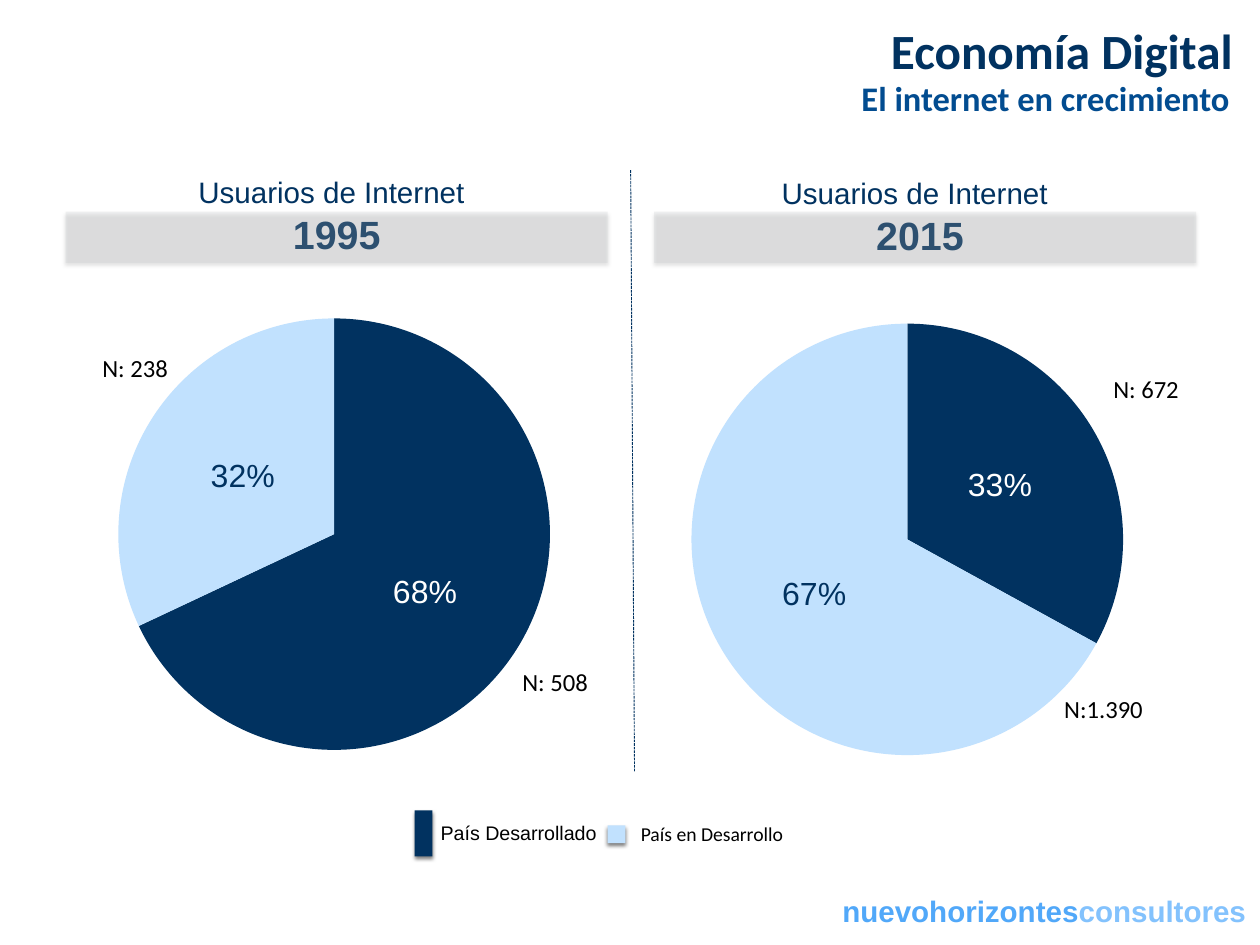
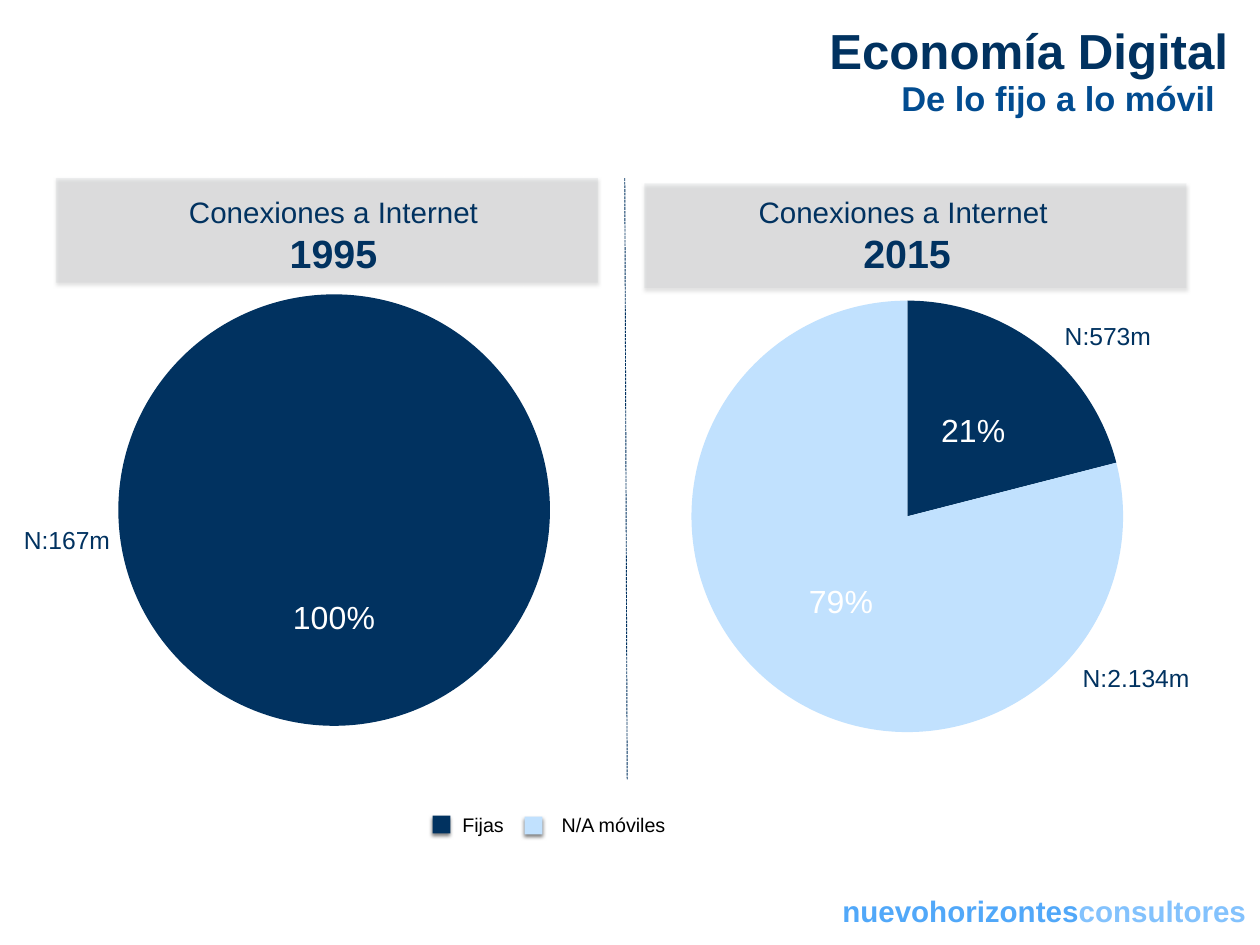
from lxml import etree
from pptx import Presentation
from pptx.chart.data import CategoryChartData
from pptx.dml.color import RGBColor
from pptx.enum.chart import XL_CHART_TYPE, XL_LABEL_POSITION
from pptx.enum.dml import MSO_LINE
from pptx.enum.shapes import MSO_CONNECTOR, MSO_SHAPE
from pptx.enum.text import MSO_ANCHOR, MSO_AUTO_SIZE, PP_ALIGN
from pptx.oxml.ns import qn
from pptx.util import Cm, Pt

PIE = XL_CHART_TYPE.PIE
LABEL_CENTER = XL_LABEL_POSITION.CENTER
DASH = MSO_LINE.SQUARE_DOT
STRAIGHT = MSO_CONNECTOR.STRAIGHT
RECTANGLE = MSO_SHAPE.RECTANGLE
MIDDLE = MSO_ANCHOR.MIDDLE
NO_AUTOSIZE = MSO_AUTO_SIZE.NONE
CENTER, RIGHT = PP_ALIGN.CENTER, PP_ALIGN.RIGHT

NAVY, BLUE, PALE = "013260", "024C90", "C1E1FE"
GRAY, BLACK, WHITE = "C4C8CB", "000000", "FFFFFF"
SLICE_COLORS = (NAVY, PALE)

PAGE_SIZE = (36.12, 27.1)
PIE_SIZE = 12.5
BAND_WIDTH = 15.54
HEADING_HEIGHT = 2.67
COUNT_HEIGHT = 1.14
LEGEND_SIZE = (14.4, 0.97)
SWATCH_WIDTH = 0.51
INSET = 0.15

WORDMARK = [("nuevohorizontes", "51A8F9"), ("consultores", "83C2FD")]
WORDMARK_PLACE = (6, 25.35, 29.87, 1.52)

SLIDES = [
    {
        "title": "Economía Digital",
        "title_place": (1.83, 0.43, 33.66, 2.01),
        "subtitle": "El internet en crecimiento",
        "subtitle_place": (24.46, 2.06, 11.02, 1.47),
        "title_font": "Calibri",
        "bands_on_top": True,
        "band_height": 1.47,
        "bands": [(1.88, 6.07), (18.75, 6.07)],
        "headings": [
            (("Usuarios de Internet", " 1995"), (5.51, 4.85, 7.98)),
            (("Usuarios de Internet", " 2015"), (22.23, 4.88, 7.98)),
        ],
        "pies": [((68, 32), (3.33, 9.07)), ((33, 67), (19.76, 9.22))],
        "label_colors": (WHITE, NAVY),
        "count_format": {"name": "Calibri", "color": BLACK},
        "counts": [
            ("N: 238", (1.68, 9.98, 4.39)),
            ("N: 508", (13.72, 18.97, 4.39)),
            ("N:1.390", (29.44, 19.76, 4.39)),
            ("N: 672", (30.66, 10.57, 4.39)),
        ],
        "legend": [
            ("País Desarrollado", "Arial", (7.67, 23.39), (11.89, 23.24, 1.32)),
            ("País en Desarrollo", "Calibri", (13.21, 23.42), (17.42, 23.67, 0.51)),
        ],
        "divider": (18.08, 4.88, 18.19, 22.12),
    },
    {
        "title": "Economía Digital",
        "title_place": (1.7, 0.43, 33.66, 2.01),
        "subtitle": "De lo fijo a lo móvil",
        "subtitle_place": (25.65, 2.06, 9.37, 1.47),
        "title_font": "Arial",
        "bands_on_top": False,
        "band_height": 3,
        "bands": [(1.6, 5.11), (18.47, 5.26)],
        "headings": [
            (("Conexiones a Internet", "1995"), (5.23, 5.41, 8.66)),
            (("Conexiones a Internet ", "2015"), (21.56, 5.41, 8.89)),
        ],
        "pies": [((100, 0), (3.33, 8.38)), ((21, 79), (19.76, 8.56))],
        "label_colors": (WHITE, WHITE),
        "count_format": {"name": "Arial", "color": NAVY},
        "counts": [
            ("N:167m", (0.51, 14.91, 2.82)),
            ("N:573m", (30.35, 9.07, 2.82)),
            ("N:2.134m", (30.73, 18.87, 3.68)),
        ],
        "legend": [
            ("Fijas", "Arial", (6.65, 23.16), (12.4, 23.39, 0.51)),
            ("N/A móviles", "Arial", (10.39, 23.16), (15.04, 23.42, 0.51)),
        ],
        "divider": (17.91, 5.11, 17.98, 22.35),
    },
]


def rgb(value):
    return RGBColor.from_string(value)


def lengths(values):
    return [Cm(value) for value in values]


def style_font(font, size, color, name="Arial", bold=False):
    for key, value in {"size": Pt(size), "name": name, "bold": bold}.items():
        setattr(font, key, value)
    font.color.rgb = rgb(color)


def prepare_frame(frame, wrap=True):
    settings = {"word_wrap": wrap, "auto_size": NO_AUTOSIZE, "vertical_anchor": MIDDLE}
    for side in ("left", "top", "right", "bottom"):
        settings["margin_" + side] = Cm(INSET)
    for key, value in settings.items():
        setattr(frame, key, value)


def add_text(page, place, lines, align=CENTER, wrap=True):
    box = page.shapes.add_textbox(*lengths(place))
    frame = box.text_frame
    prepare_frame(frame, wrap)
    for index, spans in enumerate(lines):
        para = frame.add_paragraph() if index else frame.paragraphs[0]
        para.alignment = align
        for text, font_format in spans:
            span = para.add_run()
            span.text = text
            style_font(span.font, **font_format)
    return box


def add_title(page, content):
    title = page.shapes.title
    names = ("left", "top", "width", "height")
    for key, value in zip(names, lengths(content["title_place"])):
        setattr(title, key, value)
    title.text = content["title"]
    prepare_frame(title.text_frame)
    para = title.text_frame.paragraphs[0]
    para.alignment = RIGHT
    style_font(para.runs[0].font, 40, NAVY, content["title_font"], True)


def add_alpha(color_element, percent):
    etree.SubElement(color_element, qn("a:alpha"), val=str(percent * 1000))


def add_block(page, place, color, opacity=100):
    block = page.shapes.add_shape(RECTANGLE, *lengths(place))
    block.shadow.inherit = False
    block.line.fill.background()
    block.fill.solid()
    block.fill.fore_color.rgb = rgb(color)
    properties = block.element.spPr
    if opacity < 100:
        add_alpha(properties.find(".//" + qn("a:srgbClr")), opacity)
    shadow = etree.SubElement(
        properties.find(qn("a:effectLst")), qn("a:outerShdw"),
        blurRad=str(Pt(3)), dist=str(Pt(2)), dir="5400000", rotWithShape="0",
    )
    add_alpha(etree.SubElement(shadow, qn("a:srgbClr"), val=BLACK), 50)


def add_bands(page, content):
    for place in content["bands"]:
        add_block(page, (*place, BAND_WIDTH, content["band_height"]), GRAY, 23)


def set_plot_area(chart):
    area = chart.element.find(".//" + qn("c:plotArea"))
    for old in area.findall(qn("c:layout")):
        area.remove(old)
    layout = etree.Element(qn("c:layout"))
    manual = etree.SubElement(layout, qn("c:manualLayout"))
    settings = {
        "layoutTarget": "inner", "xMode": "edge", "yMode": "edge",
        "x": "0.005", "y": "0.005", "w": "0.99", "h": "0.99",
    }
    for key, value in settings.items():
        etree.SubElement(manual, qn("c:" + key), val=value)
    area.insert(0, layout)


def add_pie(page, values, place, label_colors):
    data = CategoryChartData()
    data.categories = ["1", "2"]
    data.add_series("Series 1", values)
    frame = page.shapes.add_chart(PIE, *lengths((*place, PIE_SIZE, PIE_SIZE)), data)
    chart = frame.chart
    chart.has_title = False
    chart.has_legend = False
    style_font(chart.font, 10, BLACK)
    plot = chart.plots[0]
    plot.vary_by_categories = True
    set_plot_area(chart)
    for index, color in enumerate(SLICE_COLORS):
        point = plot.series[0].points[index]
        point.format.fill.solid()
        point.format.fill.fore_color.rgb = rgb(color)
        style_font(point.data_label.font, 26, label_colors[index])
        point.data_label.position = LABEL_CENTER
    for label, value in zip(chart.element.iter(qn("c:dLbl")), values):
        label.find(qn("c:showVal")).set("val", "0")
        label.find(qn("c:showPercent")).set("val", "1" if value else "0")


def add_divider(page, ends):
    divider = page.shapes.add_connector(STRAIGHT, *lengths(ends))
    divider.line.color.rgb = rgb(NAVY)
    divider.line.width = Pt(0.75)
    divider.line.dash_style = DASH
    etree.SubElement(divider.element.spPr, qn("a:effectLst"))


def build_page(page, content):
    add_title(page, content)
    if not content["bands_on_top"]:
        add_bands(page, content)
    for values, place in content["pies"]:
        add_pie(page, values, place, content["label_colors"])
    for (topic, year), place in content["headings"]:
        lines = [
            [(topic, {"size": 24, "color": NAVY})],
            [(year, {"size": 32, "color": NAVY, "bold": True})],
        ]
        add_text(page, (*place, HEADING_HEIGHT), lines, wrap=False)
    for text, place in content["counts"]:
        font_format = {"size": 20, **content["count_format"]}
        add_text(page, (*place, COUNT_HEIGHT), [[(text, font_format)]])
    for entry, color in zip(content["legend"], SLICE_COLORS):
        text, name, place, (left, top, height) = entry
        font_format = {"size": 16, "color": BLACK, "name": name}
        add_text(page, (*place, *LEGEND_SIZE), [[(text, font_format)]])
        add_block(page, (left, top, SWATCH_WIDTH, height), color)
    font_format = {"size": 28, "color": BLUE, "name": content["title_font"], "bold": True}
    add_text(page, content["subtitle_place"], [[(content["subtitle"], font_format)]], wrap=False)
    if content["bands_on_top"]:
        add_bands(page, content)
    add_divider(page, content["divider"])


def main():
    deck = Presentation()
    deck.slide_width, deck.slide_height = lengths(PAGE_SIZE)
    layout = deck.slide_layouts[5]
    pages = [deck.slides.add_slide(layout) for _ in SLIDES]
    spans = [(text, {"size": 24, "color": color, "bold": True}) for text, color in WORDMARK]
    wordmark = add_text(pages[0], WORDMARK_PLACE, [spans], RIGHT)
    layout.shapes.element.append(wordmark.element)
    for page, content in zip(pages, SLIDES):
        build_page(page, content)
    deck.save("out.pptx")


if __name__ == "__main__":
    main()
